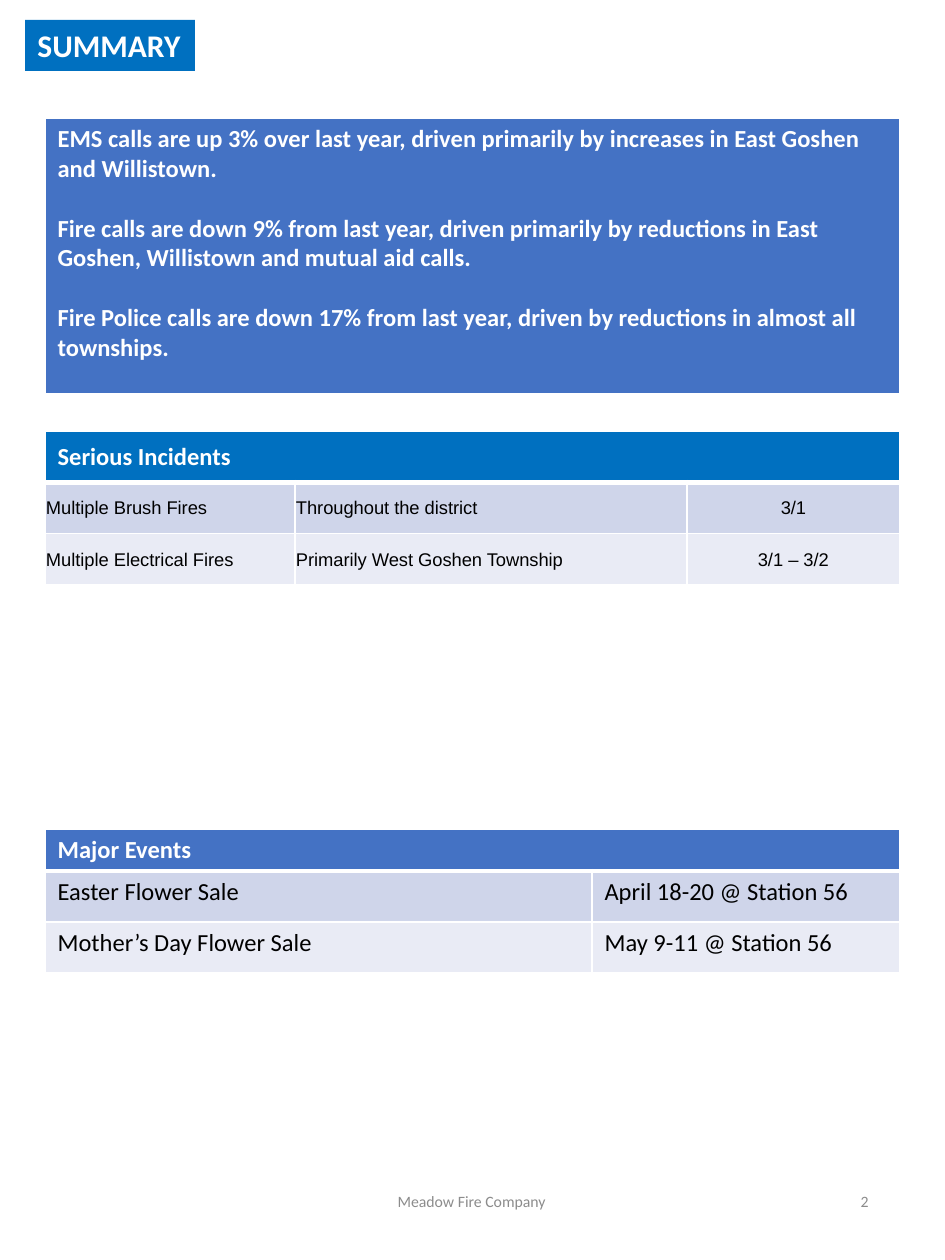
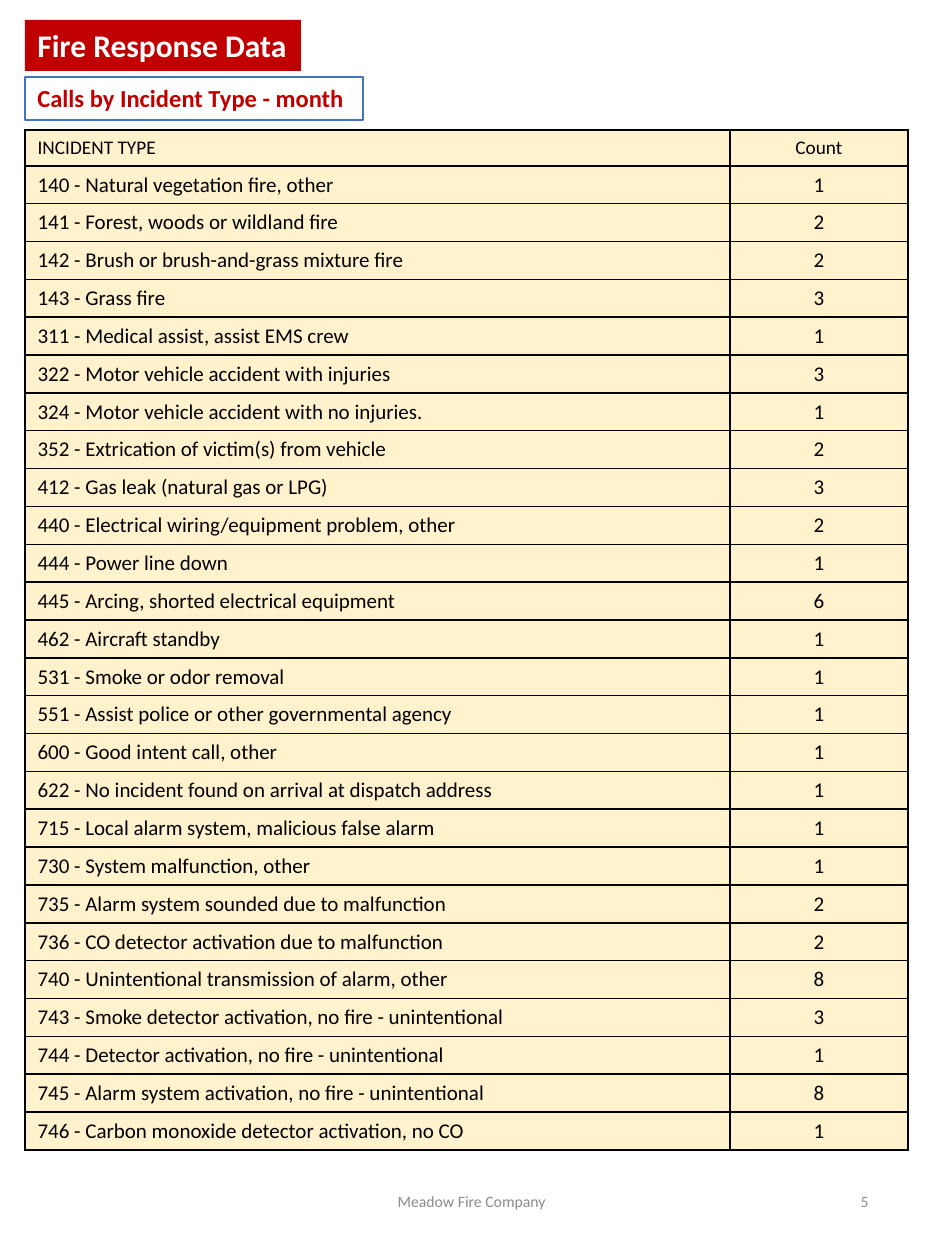
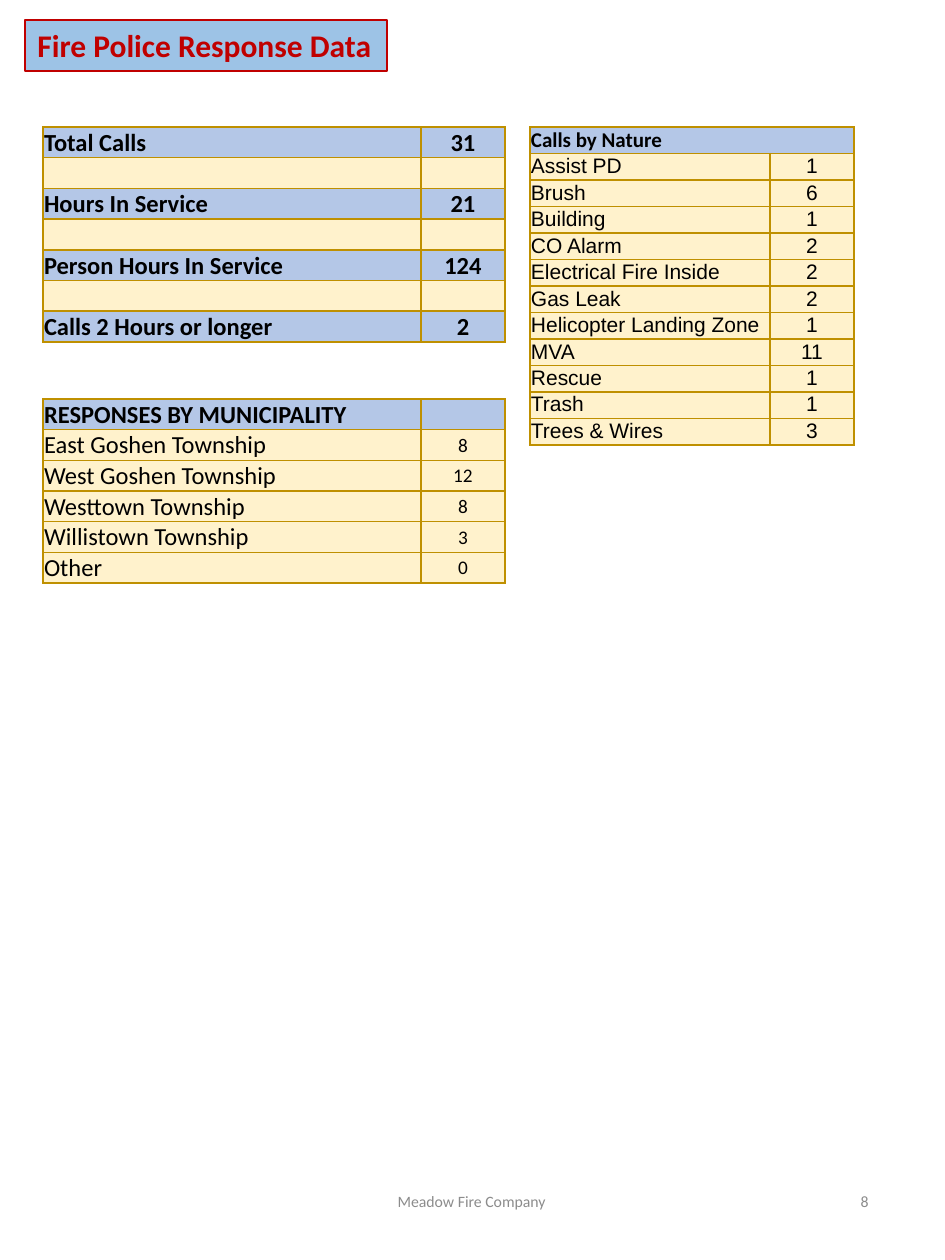
from dataclasses import dataclass, replace

from lxml.etree import SubElement
from pptx import Presentation
from pptx.dml.color import RGBColor
from pptx.enum.shapes import MSO_SHAPE
from pptx.enum.text import MSO_ANCHOR, MSO_AUTO_SIZE, PP_ALIGN
from pptx.oxml.ns import qn
from pptx.util import Emu, Pt

WHITE = RGBColor(0xFF, 0xFF, 0xFF)
BLACK = RGBColor(0x00, 0x00, 0x00)
GREY = RGBColor(0x8C, 0x8C, 0x8C)
BLUE = RGBColor(0x00, 0x70, 0xC0)
ACCENT = RGBColor(0x44, 0x72, 0xC4)
BAND_DARK = RGBColor(0xCF, 0xD5, 0xEA)
BAND_LIGHT = RGBColor(0xE9, 0xEB, 0xF5)
RED = RGBColor(0xC0, 0x00, 0x00)
CREAM = RGBColor(0xFF, 0xF2, 0xCC)
SKY = RGBColor(0x9D, 0xC3, 0xE6)
PALE_BLUE = RGBColor(0xB4, 0xC7, 0xE7)
GOLD = RGBColor(0xBF, 0x90, 0x00)

FOOTER = "Meadow Fire Company"
PX_PER_INCH = 126


def px(length):
    return Emu(round(length * 914400 / PX_PER_INCH))


@dataclass(frozen=True)
class CellStyle:
    fill: RGBColor
    size: float = 14
    bold: bool = False
    color: RGBColor = BLACK
    font: str = "Calibri"
    align: PP_ALIGN = PP_ALIGN.LEFT
    anchor: MSO_ANCHOR = MSO_ANCHOR.TOP
    tight: bool = False
    bottom: float = 1
    space_after: float = 0


def centred(style, **changes):
    return replace(style, align=PP_ALIGN.CENTER, **changes)


# Summary styles
EVENT_HEADER = CellStyle(ACCENT, bold=True, color=WHITE, bottom=3)
TREND = replace(EVENT_HEADER, space_after=17)
INCIDENT_HEADER = replace(EVENT_HEADER, fill=BLUE, anchor=MSO_ANCHOR.MIDDLE)
EVENT_DARK, EVENT_LIGHT = CellStyle(BAND_DARK), CellStyle(BAND_LIGHT)
INCIDENT_DARK, INCIDENT_LIGHT = (
    replace(band, size=10.5, font="Arial", anchor=MSO_ANCHOR.MIDDLE, tight=True)
    for band in (EVENT_DARK, EVENT_LIGHT))

# Response data styles
TYPE = CellStyle(CREAM, size=12)
TYPE_HEADER = replace(TYPE, size=11, anchor=MSO_ANCHOR.MIDDLE)
TOTAL = CellStyle(PALE_BLUE, bold=True, anchor=MSO_ANCHOR.BOTTOM, tight=True)
TOWNSHIP = replace(TOTAL, fill=CREAM, bold=False)
NATURE_HEADER = replace(TOTAL, size=12)
NATURE = CellStyle(CREAM, size=12, font="Arial", tight=True)

TOTAL_ROW = (TOTAL, centred(TOTAL))
SPACER_ROW = (TOWNSHIP, TOWNSHIP)
TOWNSHIP_ROW = (TOWNSHIP, centred(TOWNSHIP, size=11, anchor=MSO_ANCHOR.MIDDLE))
TYPE_ROW = (TYPE, centred(TYPE))
NATURE_ROW = (NATURE, centred(NATURE))

TRENDS = "\n".join([
    "EMS calls are up 3% over last year, driven primarily by increases in East Goshen and Willistown.",
    "Fire calls are down 9% from last year, driven primarily by reductions in East Goshen, "
    "Willistown and mutual aid calls.",
    "Fire Police calls are down 17% from last year, driven by reductions in almost all townships.",
])

SERIOUS_INCIDENTS = [
    ((INCIDENT_HEADER,) * 3, ("Serious Incidents",)),
    ((INCIDENT_DARK, INCIDENT_DARK, centred(INCIDENT_DARK)),
     ("Multiple Brush Fires", "Throughout the district", "3/1")),
    ((INCIDENT_LIGHT, INCIDENT_LIGHT, centred(INCIDENT_LIGHT)),
     ("Multiple Electrical Fires", "Primarily West Goshen Township", "3/1 – 3/2")),
]

MAJOR_EVENTS = [
    ((EVENT_HEADER,) * 2, ("Major Events",)),
    ((EVENT_DARK,) * 2, ("Easter Flower Sale", "April 18-20 @ Station 56")),
    ((EVENT_LIGHT,) * 2, ("Mother’s Day Flower Sale", "May 9-11 @ Station 56")),
]

INCIDENT_TYPES = [
    ("140 - Natural vegetation fire, other", 1),
    ("141 - Forest, woods or wildland fire", 2),
    ("142 - Brush or brush-and-grass mixture fire", 2),
    ("143 - Grass fire", 3),
    ("311 - Medical assist, assist EMS crew", 1),
    ("322 - Motor vehicle accident with injuries", 3),
    ("324 - Motor vehicle accident with no injuries.", 1),
    ("352 - Extrication of victim(s) from vehicle", 2),
    ("412 - Gas leak (natural gas or LPG)", 3),
    ("440 - Electrical wiring/equipment problem, other", 2),
    ("444 - Power line down", 1),
    ("445 - Arcing, shorted electrical equipment", 6),
    ("462 - Aircraft standby", 1),
    ("531 - Smoke or odor removal", 1),
    ("551 - Assist police or other governmental agency", 1),
    ("600 - Good intent call, other", 1),
    ("622 - No incident found on arrival at dispatch address", 1),
    ("715 - Local alarm system, malicious false alarm", 1),
    ("730 - System malfunction, other", 1),
    ("735 - Alarm system sounded due to malfunction", 2),
    ("736 - CO detector activation due to malfunction", 2),
    ("740 - Unintentional transmission of alarm, other", 8),
    ("743 - Smoke detector activation, no fire - unintentional", 3),
    ("744 - Detector activation, no fire - unintentional", 1),
    ("745 - Alarm system activation, no fire - unintentional", 8),
    ("746 - Carbon monoxide detector activation, no CO", 1),
]

TOTALS = [("Total Calls", 31), ("Hours In Service", 21),
          ("Person Hours In Service", 124), ("Calls 2 Hours or longer", 2)]

MUNICIPALITIES = [("East Goshen Township", 8), ("West Goshen Township", 12),
                  ("Westtown Township", 8), ("Willistown Township", 3), ("Other", 0)]

NATURES = [("Assist PD", 1), ("Brush", 6), ("Building", 1), ("CO Alarm", 2),
           ("Electrical Fire Inside", 2), ("Gas Leak", 2), ("Helicopter Landing Zone", 1),
           ("MVA", 11), ("Rescue", 1), ("Trash", 1), ("Trees & Wires", 3)]


def format_text(text_frame, size, color, bold=False, font="Calibri",
                align=PP_ALIGN.LEFT, space_after=0):
    for paragraph in text_frame.paragraphs:
        paragraph.alignment = align
        if space_after:
            paragraph.space_after = Pt(space_after)
        for run in paragraph.runs:
            run.font.size, run.font.bold, run.font.name = Pt(size), bold, font
            run.font.color.rgb = color
        if not paragraph.runs:
            SubElement(paragraph._p, qn("a:endParaRPr"), sz=str(round(size * 100)))


def add_label(slide, text, box, size, color, fill, line=None, wrap=False):
    label = slide.shapes.add_shape(MSO_SHAPE.RECTANGLE, *map(px, box))
    label.shadow.inherit = False
    label.fill.solid()
    label.fill.fore_color.rgb = fill
    if line is None:
        label.line.fill.background()
    else:
        label.line.color.rgb = line
        label.line.width = Pt(0.75)
    frame = label.text_frame
    frame.text = text
    frame.word_wrap = wrap
    frame.auto_size = MSO_AUTO_SIZE.SHAPE_TO_FIT_TEXT
    frame.vertical_anchor = MSO_ANCHOR.TOP
    format_text(frame, size, color, bold=True)


def add_footer(slide, number):
    for text, left, width, align in ((FOOTER, 312, 319, PP_ALIGN.CENTER),
                                     (str(number), 668, 213, PP_ALIGN.RIGHT)):
        frame = slide.shapes.add_textbox(px(left), px(1168), px(width), px(67)).text_frame
        frame.text = text
        frame.word_wrap = True
        frame.vertical_anchor = MSO_ANCHOR.MIDDLE
        format_text(frame, 9, GREY, align=align)


def add_page(deck, number, title, width, color, fill, line=None):
    slide = deck.slides.add_slide(deck.slide_layouts[6])
    add_label(slide, title, (25, 20, width, 51), 18, color, fill, line)
    add_footer(slide, number)
    return slide


def set_borders(cell, color, top, bottom):
    properties = cell._tc.get_or_add_tcPr()
    widths = {"a:lnL": 1, "a:lnR": 1, "a:lnT": top, "a:lnB": bottom}
    for position, (side, width) in enumerate(widths.items()):
        border = SubElement(properties, qn(side), w=str(Pt(width)))
        fill = SubElement(border, qn("a:solidFill"))
        SubElement(fill, qn("a:srgbClr"), val=str(color))
        properties.insert(position, border)


def format_cell(cell, style, border, top):
    cell.fill.solid()
    cell.fill.fore_color.rgb = style.fill
    cell.vertical_anchor = style.anchor
    if style.tight:
        cell.margin_left = cell.margin_right = cell.margin_top = px(1)
        cell.margin_bottom = 0
    format_text(cell.text_frame, style.size, style.color, style.bold, style.font,
                style.align, style.space_after)
    set_borders(cell, border, top, style.bottom)


def add_grid(slide, left, top, widths, height, rows, border, header_height=None):
    """Rows are (styles, texts) pairs; a row with a single text spans every column."""
    grid = slide.shapes.add_table(len(rows), len(widths), px(left), px(top),
                                  px(sum(widths)), px(height)).table
    grid.first_row = grid.horz_banding = False
    for column, width in zip(grid.columns, widths):
        column.width = px(width)
    for r, row in enumerate(grid.rows):
        if header_height is None:
            row.height = px(height / len(rows))
        else:
            row.height = px(header_height if r == 0
                            else (height - header_height) / (len(rows) - 1))
    above = 1
    for r, (styles, texts) in enumerate(rows):
        for c, text in enumerate(texts):
            grid.cell(r, c).text = str(text)
        for c, style in enumerate(styles):
            format_cell(grid.cell(r, c), style, border, above)
        if len(texts) < len(widths):
            grid.cell(r, 0).merge(grid.cell(r, len(widths) - 1))
        above = styles[0].bottom


def build_summary(deck):
    slide = add_page(deck, 2, "SUMMARY", 170, WHITE, BLUE)
    add_grid(slide, 45, 431, (250, 392, 213), 154, SERIOUS_INCIDENTS, WHITE)
    add_grid(slide, 45, 829, (547, 308), 144, MAJOR_EVENTS, WHITE, header_height=42)
    add_grid(slide, 45, 118, (855,), 277, [((TREND,), (TRENDS,))], WHITE)


def build_fire(deck):
    slide = add_page(deck, 5, "Fire Response Data", 276, WHITE, RED)
    add_label(slide, "Calls by Incident Type - month", (25, 77, 338, 43), 14,
              RED, WHITE, line=ACCENT, wrap=True)
    header = ((TYPE_HEADER, centred(TYPE_HEADER)), ("INCIDENT TYPE", "Count"))
    rows = [header] + [(TYPE_ROW, incident) for incident in INCIDENT_TYPES]
    add_grid(slide, 25, 130, (705, 178), 1020, rows, BLACK, header_height=35)


def build_fire_police(deck):
    slide = add_page(deck, 8, "Fire Police Response Data", 362, RED, SKY, line=RED)
    municipality_rows = [(TOTAL_ROW, ("RESPONSES BY MUNICIPALITY", ""))]
    municipality_rows += [(TOWNSHIP_ROW, township) for township in MUNICIPALITIES]
    add_grid(slide, 43, 399, (378, 84), 184, municipality_rows, GOLD)

    nature_rows = [((NATURE_HEADER,) * 2, ("Calls by Nature",))]
    nature_rows += [(NATURE_ROW, nature) for nature in NATURES]
    add_grid(slide, 530, 127, (240, 84), 318, nature_rows, GOLD)

    total_rows = []
    for total in TOTALS:
        total_rows += [(TOTAL_ROW, total), (SPACER_ROW, ("", ""))]
    add_grid(slide, 43, 127, (378, 84), 215, total_rows[:-1], GOLD)


def main():
    deck = Presentation()
    deck.slide_width, deck.slide_height = px(945), px(1260)
    build_summary(deck)
    build_fire(deck)
    build_fire_police(deck)
    deck.save("out.pptx")


if __name__ == "__main__":
    main()
